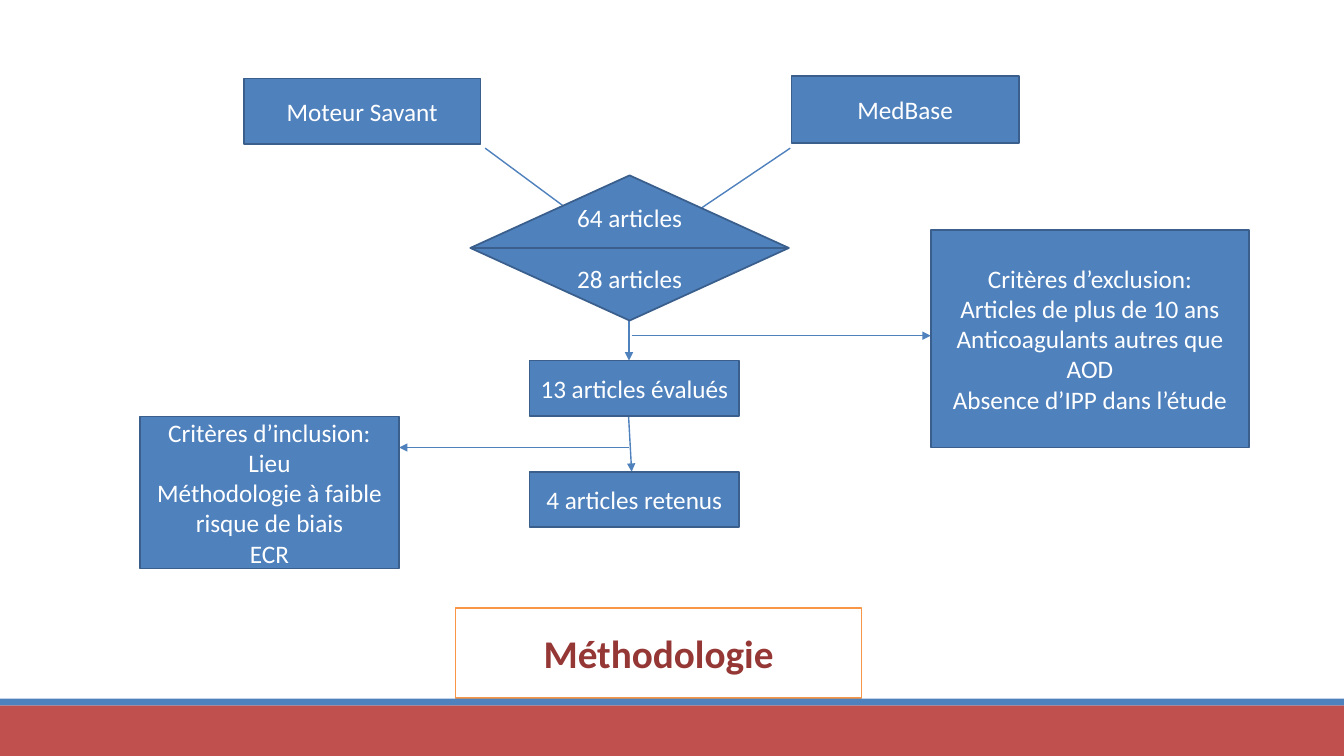
from dataclasses import dataclass

from lxml import etree
from pptx import Presentation
from pptx import util as u
from pptx.dml.color import RGBColor
from pptx.enum import shapes, text
from pptx.oxml.ns import qn


@dataclass(frozen=True)
class Theme:
    font: str = "Calibri"
    body: int = 18
    head: int = 28
    edge: float = 1.25
    line: float = 1
    blue: str = "4F81BD"
    navy: str = "3A5F8C"
    red: str = "C0504D"
    wine: str = "953735"
    gold: str = "F79646"
    white: str = "FFFFFF"


T = Theme()
WIDE, HIGH = u.Inches(13.33), u.Inches(7.5)
RECT = shapes.MSO_SHAPE.RECTANGLE
SORT = shapes.MSO_SHAPE.FLOWCHART_SORT


def place(*spots):
    """Turn alternating percent shares of width and height into lengths."""
    return [round(s * (HIGH if i % 2 else WIDE) / 100)
            for i, s in enumerate(spots)]


def paint(shape, fill, edge=None):
    shape.fill.solid()
    shape.fill.fore_color.rgb = RGBColor.from_string(fill)
    if edge:
        shape.line.color.rgb = RGBColor.from_string(edge)
        shape.line.width = u.Pt(T.edge)
    else:
        shape.line.fill.background()


def write(shape, words, size=T.body, color=T.white, bold=False, gap=0):
    frame = shape.text_frame
    frame.word_wrap = True
    frame.auto_size = text.MSO_AUTO_SIZE.NONE
    frame.vertical_anchor = text.MSO_ANCHOR.MIDDLE
    frame.text = words
    for i, para in enumerate(frame.paragraphs):
        para.alignment = text.PP_ALIGN.CENTER
        para.space_before = u.Pt(gap if i else 0)
        font = para.font
        font.name, font.size, font.bold = T.font, u.Pt(size), bold
        font.color.rgb = RGBColor.from_string(color)


def block(slide, spot, fill=T.blue, edge=None, kind=RECT):
    shape = slide.shapes.add_shape(kind, *place(*spot))
    shape.shadow.inherit = False
    paint(shape, fill, edge)
    return shape


def box(slide, spot, words, kind=RECT, gap=0):
    write(block(slide, spot, edge=T.navy, kind=kind), words, gap=gap)


def arrow(slide, *ends):
    link = slide.shapes.add_connector(
        shapes.MSO_CONNECTOR.STRAIGHT, *place(*ends))
    link.line.color.rgb = RGBColor.from_string(T.blue)
    link.line.width = u.Pt(T.line)
    etree.SubElement(link.line._get_or_add_ln(), qn("a:tailEnd"),
                     type="triangle")
    etree.SubElement(link._element.spPr, qn("a:effectLst"))


def title(slide, spot, words):
    head = slide.shapes.title
    head.left, head.top, head.width, head.height = place(*spot)
    paint(head, T.white, T.gold)
    write(head, words, size=T.head, color=T.wine, bold=True)


def main():
    deck = Presentation()
    deck.slide_width, deck.slide_height = WIDE, HIGH
    slide = deck.slides.add_slide(deck.slide_layouts[5])

    # Footer bands and title
    block(slide, (0, 93.3, 100, 6.7), fill=T.red)
    block(slide, (0, 92.4, 100, 0.9))
    title(slide, (33.9, 80.4, 30.2, 11.9), "Méthodologie")

    # Arrows, listed from the sources down to the result
    mid = 46.8
    for ends in ((36.1, 19.6, 45.3, 31.7),
                 (58.8, 19.6, 48.7, 31.7),
                 (mid, 40.4, mid, 47.7),
                 (47, 44.4, 69.25, 44.4),
                 (46.7, 52.8, 47, 62.4),
                 (mid, 59.2, 29.7, 59.2)):
        arrow(slide, *ends)

    # Sources
    box(slide, (18.15, 10.4, 17.6, 8.7), "Moteur Savant")
    box(slide, (58.9, 10.1, 16.9, 8.8), "MedBase")

    # Selection steps
    box(slide, (35, 23.2, 23.7, 19.2), "64 articles\n28 articles",
        kind=SORT, gap=22)
    for top, words in ((47.7, "13 articles évalués"),
                       (62.4, "4 articles retenus")):
        box(slide, (39.4, top, 15.6, 7.3), words)

    # Criteria
    box(slide, (69.25, 30.4, 23.7, 28.8),
        "Critères d’exclusion:\nArticles de plus de 10 ans\n"
        "Anticoagulants autres que AOD\nAbsence d’IPP dans l’étude")
    box(slide, (10.4, 55.1, 19.3, 20.1),
        "Critères d’inclusion:\nLieu\n"
        "Méthodologie à faible risque de biais\nECR")

    deck.save("out.pptx")


if __name__ == "__main__":
    main()
